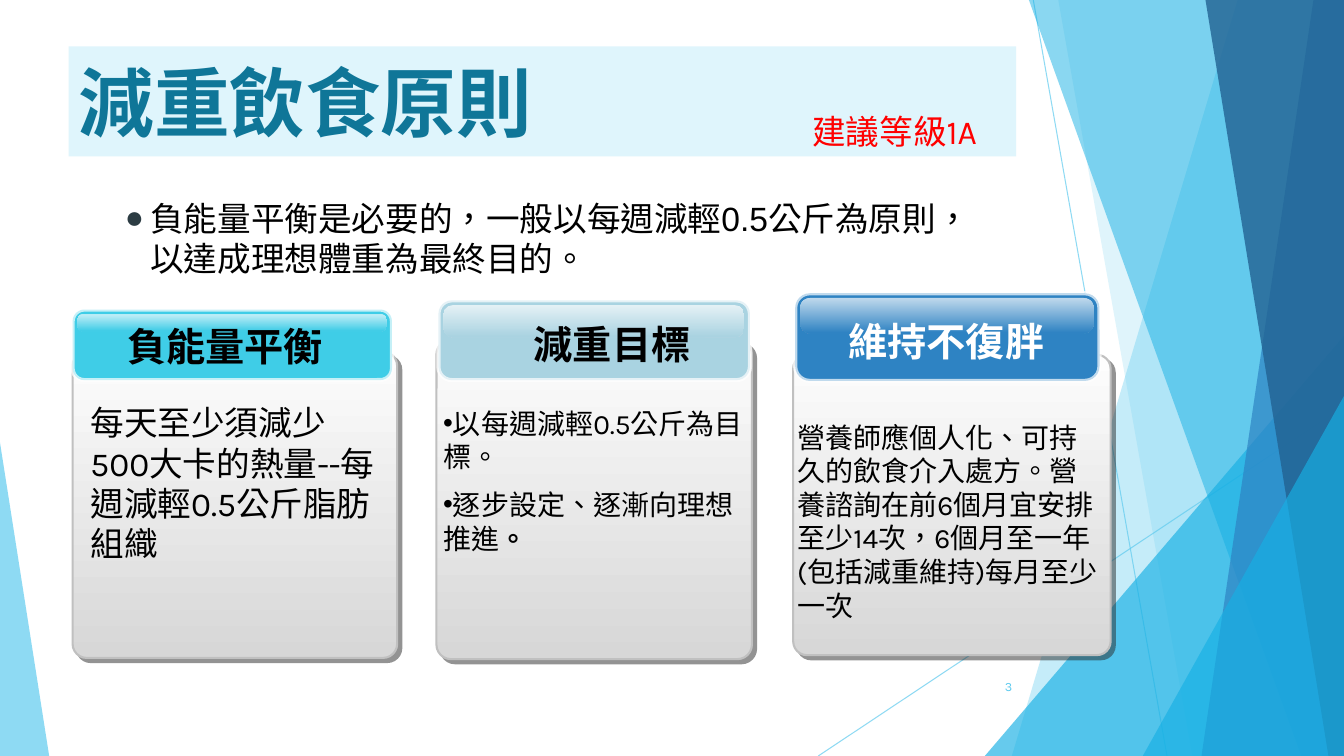
from lxml.etree import SubElement
from pptx import Presentation
from pptx.dml.color import RGBColor
from pptx.enum.lang import MSO_LANGUAGE_ID as Language
from pptx.enum.shapes import MSO_CONNECTOR as Connector, MSO_SHAPE as Shape
from pptx.enum.text import MSO_ANCHOR as Anchor, MSO_AUTO_SIZE as AutoSize, PP_ALIGN as Align
from pptx.oxml.ns import qn
from pptx.util import Cm, Pt

WIDTH, HEIGHT = 33.87, 19.05
SKY, AZURE, BLUE, NAVY = "5FCBEF", "17B0E4", "2E83C3", "226292"


def color(value):
    return RGBColor.from_string(value)


def child(parent, tag, **attributes):
    return SubElement(parent, qn(tag), {name: str(value) for name, value in attributes.items()})


def fade(element, opacity):
    for tint in element.iter(qn("a:srgbClr")):
        child(tint, "a:alpha", val=opacity * 1000)


def add_bullet(paragraph, char, tint=None, size=None, indent=0, before=None):
    properties = paragraph._p.get_or_add_pPr()
    properties.set("marL", str(Cm(indent)))
    properties.set("indent", str(-Cm(indent)))
    if before:
        child(child(properties, "a:spcBef"), "a:spcPct", val=before * 1000)
    if tint:
        child(child(properties, "a:buClr"), "a:srgbClr", val=tint)
    if size:
        child(properties, "a:buSzPct", val=size * 1000)
    child(properties, "a:buFont", typeface="Arial")
    child(properties, "a:buChar", char=char)


def write(frame, text, size=24, font="Karla", tint="000000", bold=False,
          align=Align.LEFT, anchor=Anchor.TOP, bullet=None):
    frame.vertical_anchor = anchor
    for number, line in enumerate(text.split("\n")):
        paragraph = frame.add_paragraph() if number else frame.paragraphs[0]
        paragraph.alignment = align
        if bullet:
            add_bullet(paragraph, **bullet)
        for index, part in enumerate(line.split("*")):
            run = paragraph.add_run()
            run.text = part
            run.font.size = Pt(size)
            run.font.name = font
            run.font.bold = bold or index % 2 == 1
            run.font.color.rgb = color(tint)
            run.font.language_id = Language.TRADITIONAL_CHINESE


class DietSlide:
    """Holds the current slide and draws its elements in one style."""

    def __init__(self, presentation):
        self.slide = presentation.slides.add_slide(presentation.slide_layouts[6])
        self.shapes = self.slide.shapes

    def finish(self, shape, fill, opacity=100, line=None, line_width=1.5, line_opacity=100):
        shape.shadow.inherit = False
        if isinstance(fill, tuple):
            shape.fill.gradient()
            shape.fill.gradient_angle = 270
            for stop, tint in zip(shape.fill.gradient_stops, fill):
                stop.color.rgb = color(tint)
        else:
            shape.fill.solid()
            shape.fill.fore_color.rgb = color(fill)
        properties = shape.element.spPr
        if opacity < 100:
            fade(properties, opacity)
        if line:
            shape.line.color.rgb = color(line)
            shape.line.width = Pt(line_width)
            if line_opacity < 100:
                fade(properties.find(qn("a:ln")), line_opacity)
        else:
            shape.line.fill.background()
        return shape

    def box(self, kind, place, fill, adjust=None, **style):
        shape = self.shapes.add_shape(kind, *map(Cm, place))
        if adjust is not None:
            shape.adjustments[0] = adjust
        return self.finish(shape, fill, **style)

    def facet(self, top_x, bottom_x, fill, opacity):
        corners = [(top_x, 0), (WIDTH, 0), (WIDTH, HEIGHT), (bottom_x, HEIGHT)]
        points = [(Cm(x), Cm(y)) for x, y in corners]
        builder = self.shapes.build_freeform(*points[0], scale=1.0)
        builder.add_line_segments(points[1:], close=True)
        self.finish(builder.convert_to_shape(), fill, opacity)

    def ray(self, *ends):
        connector = self.shapes.add_connector(Connector.STRAIGHT, *map(Cm, ends))
        connector.line.color.rgb = color(SKY)
        connector.line.width = Pt(0.75)
        fade(connector.line._ln, 70)
        child(connector.element.spPr, "a:effectLst")

    def text(self, place, text, wrap=True, grow=True, **style):
        frame = self.shapes.add_textbox(*map(Cm, place)).text_frame
        frame.word_wrap = wrap
        frame.auto_size = AutoSize.SHAPE_TO_FIT_TEXT if grow else AutoSize.NONE
        write(frame, text, **style)

    def card(self, body, head, gloss_height, fill, title_place, title, title_tint,
             note_place, note, **note_style):
        panel = self.box(Shape.ROUNDED_RECTANGLE, body, ("FDFDFD", "D7D7D7"), 0.046, line="C0C0C0")
        effects = panel.element.spPr.find(qn("a:effectLst"))
        shadow = child(effects, "a:outerShdw", blurRad=0, dist=Pt(4.2), dir=45 * 60000,
                       algn="ctr", rotWithShape=0)
        child(shadow, "a:srgbClr", val="292929")
        fade(shadow, 50)
        self.box(Shape.ROUNDED_RECTANGLE, head, fill, 0.167,
                 line="FFFFFF", line_width=3, line_opacity=70)
        left, top, width, _ = head
        gloss = (left + 0.13, top + 0.12, width - 0.28, gloss_height)
        self.box(Shape.ROUNDED_RECTANGLE, gloss, ("FFFFFF", fill), 0.284, opacity=70)
        self.text(title_place, title, size=28, tint=title_tint, bold=True, align=Align.CENTER)
        self.text(note_place, note, **note_style)

    def background(self):
        self.ray(26.04, 0, 29.41, HEIGHT)
        self.ray(WIDTH, 10.24, 20.62, HEIGHT)
        self.facet(31.19, 25.5, SKY, 36)
        self.facet(26.67, 30.05, SKY, 20)
        self.box(Shape.ISOSCELES_TRIANGLE, (24.82, 8.46, 9.05, 10.59), AZURE, 1, opacity=66)
        self.facet(25.93, 32.79, AZURE, 50)
        self.facet(33.1, 30.28, BLUE, 70)
        self.facet(30.38, 33.48, NAVY, 80)
        self.box(Shape.ISOSCELES_TRIANGLE, (28.8, 9.98, 5.07, 9.07), AZURE, 1, opacity=66)
        self.box(Shape.ISOSCELES_TRIANGLE, (0, 11.15, 1.24, 7.9), SKY, 0, opacity=70)


def main():
    presentation = Presentation()
    presentation.slide_width, presentation.slide_height = Cm(WIDTH), Cm(HEIGHT)
    page = DietSlide(presentation)
    page.background()

    page.card((1.83, 8.86, 8.18, 7.72), (1.83, 7.8, 8.05, 1.78), 0.43, "3FCDE7",
              (2.92, 8, 5.5, 1.45), "負能量平衡", "000000",
              (2.03, 10.01, 7.72, 4.37), "每天至少須減少500大卡的熱量--每週減輕0.5公斤脂肪組織")
    page.card((11, 8.56, 7.95, 8.05), (11.05, 7.57, 7.85, 2.01), 0.81, "A9D3E1",
              (12.62, 7.95, 5.61, 1.45), "減重目標", "000000",
              (10.92, 10.11, 8.36, 4.11), "以每週減輕0.5公斤為目標。\n逐步設定、逐漸向理想推進*。",
              size=20, bullet={"char": "•", "before": 50})
    page.card((19.99, 8.94, 8, 7.57), (20.04, 7.39, 7.67, 2.21), 0.89, BLUE,
              (20.88, 7.87, 5.94, 1.45), "維持不復胖", "FFFFFF",
              (19.84, 10.46, 8.15, 5.38),
              "營養師應個人化、可持久的飲食介入處方。營養諮詢在前6個月宜安排至少14次，"
              "6個月至一年(包括減重維持)每月至少一次", size=20)

    page.text((2.9, 4.85, 21.54, 2.31),
              "負能量平衡是必要的，一般以每週減輕0.5公斤為原則，以達成理想體重為最終目的。",
              font="Arial", bullet={"char": "●", "tint": "2C3C43", "size": 95, "indent": 0.64})
    banner = page.box(Shape.RECTANGLE, (1.73, 1.17, 23.88, 2.77), "DFF5FC")
    write(banner.text_frame, "減重飲食原則", size=54, tint="0F7698", bold=True, anchor=Anchor.MIDDLE)
    page.text((20.22, 2.67, 4.88, 1.27), "建議等級1A", wrap=False, tint="FF0000")
    page.text((23.85, 16.79, 1.91, 1.02), "3", grow=False, size=9, tint=SKY,
              align=Align.RIGHT, anchor=Anchor.MIDDLE)
    presentation.save("out.pptx")


if __name__ == "__main__":
    main()
